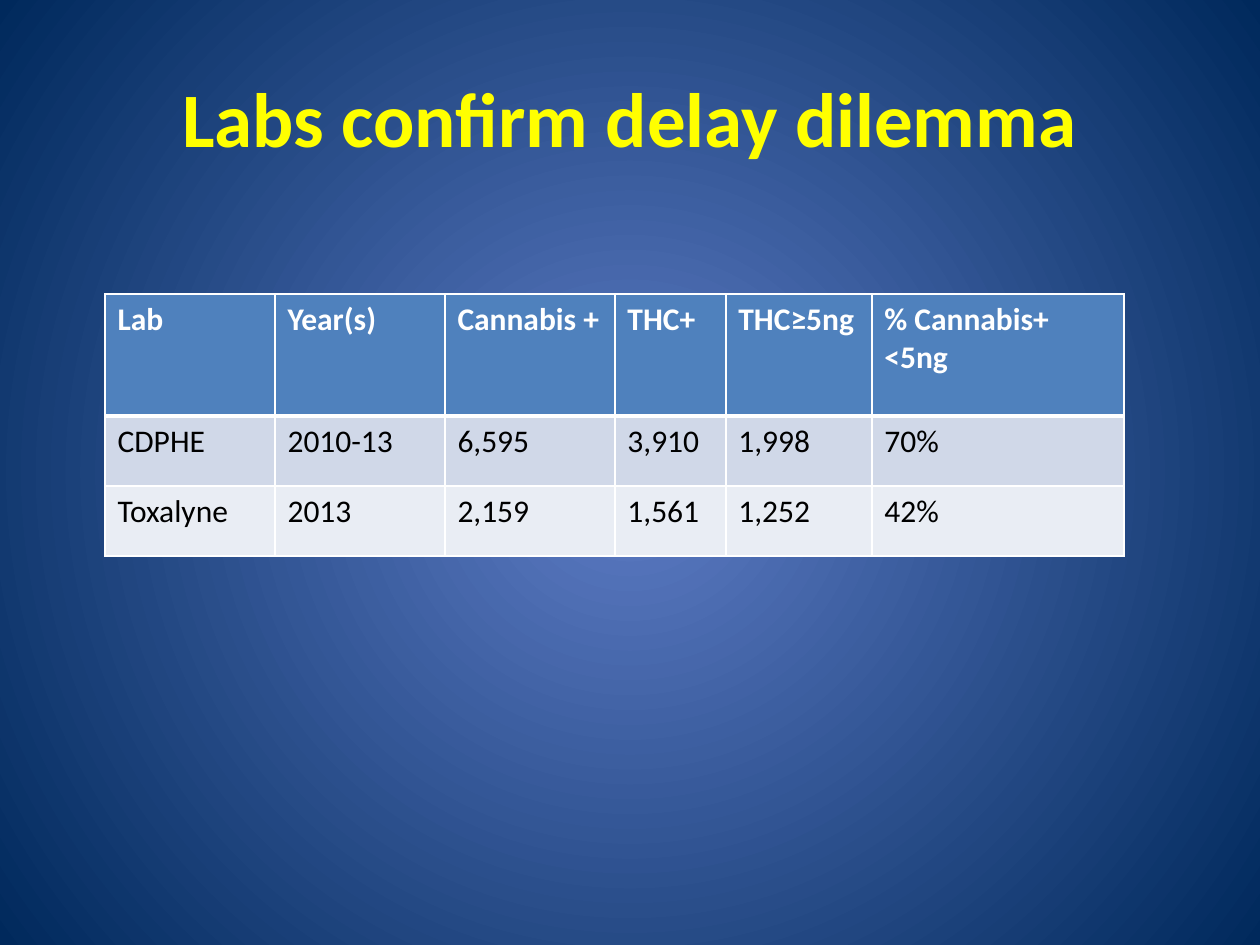
from lxml import etree
from pptx import Presentation
from pptx.dml.color import RGBColor as RGB
from pptx.enum.text import MSO_ANCHOR as Anchor, PP_ALIGN as Align
from pptx.oxml import parse_xml
from pptx.oxml.ns import nsdecls, qn
from pptx.util import Pt

PX = 914400 / 126


def px(*vals):
    return [round(v * PX) for v in vals]


def style(run, color, **font):
    run.font.color.rgb = RGB.from_string(color)
    for key, val in {"name": "Calibri", **font}.items():
        setattr(run.font, key, val)


prs = Presentation()
prs.slide_width, prs.slide_height = px(1260, 945)
slide = prs.slides.add_slide(prs.slide_layouts[6])

# Radial background
fill = slide.background.fill
fill.gradient()
for stop, color in zip(fill.gradient_stops, ("5E7CC5", "00295C")):
    stop.color.rgb = RGB.from_string(color)
lin = slide.background._cSld.find(".//" + qn("a:lin"))
lin.getparent().replace(lin, parse_xml(
    f'<a:path {nsdecls("a")} path="circle">'
    '<a:fillToRect l="50000" t="50000" r="50000" b="50000"/></a:path>'))

# Title
frame = slide.shapes.add_textbox(*px(63, 38, 1134, 157)).text_frame
frame.word_wrap = True
frame.vertical_anchor = Anchor.MIDDLE
para = frame.paragraphs[0]
para.alignment = Align.CENTER
title = para.add_run()
title.text = "Labs confirm delay dilemma"
style(title, "FFFF00", size=Pt(44), bold=True)

# Table of lab results
rows = [
    ["Lab", "Year(s)", "Cannabis +", "THC+", "THC≥5ng", "% Cannabis+ <5ng"],
    ["CDPHE", "2010-13", "6,595", "3,910", "1,998", "70%"],
    ["Toxalyne", "2013", "2,159", "1,561", "1,252", "42%"],
]
widths = [170, 170, 170, 111, 146, 252]
heights = [122, 70, 70]
fills = ["4F81BD", "D0D8E8", "E9EDF4"]
table = slide.shapes.add_table(
    len(rows), len(widths),
    *px(105, 294, sum(widths), sum(heights))).table
for col, width in zip(table.columns, px(*widths)):
    col.width = width
for row, height in zip(table.rows, px(*heights)):
    row.height = height

for r, words in enumerate(rows):
    head = r == 0
    edges = {"L": 1, "R": 1, "T": 3 if r == 1 else 1, "B": 3 if head else 1}
    for c, word in enumerate(words):
        cell = table.cell(r, c)
        cell.fill.solid()
        cell.fill.fore_color.rgb = RGB.from_string(fills[r])
        run = cell.text_frame.paragraphs[0].add_run()
        run.text = word
        style(run, "FFFFFF" if head else "000000", size=Pt(18), bold=head)
        props = cell._tc.get_or_add_tcPr()
        for i, (side, width) in enumerate(edges.items()):
            line = etree.Element(qn("a:ln" + side), w=str(Pt(width)))
            solid = etree.SubElement(line, qn("a:solidFill"))
            etree.SubElement(solid, qn("a:srgbClr"), val="FFFFFF")
            props.insert(i, line)

prs.save("out.pptx")
